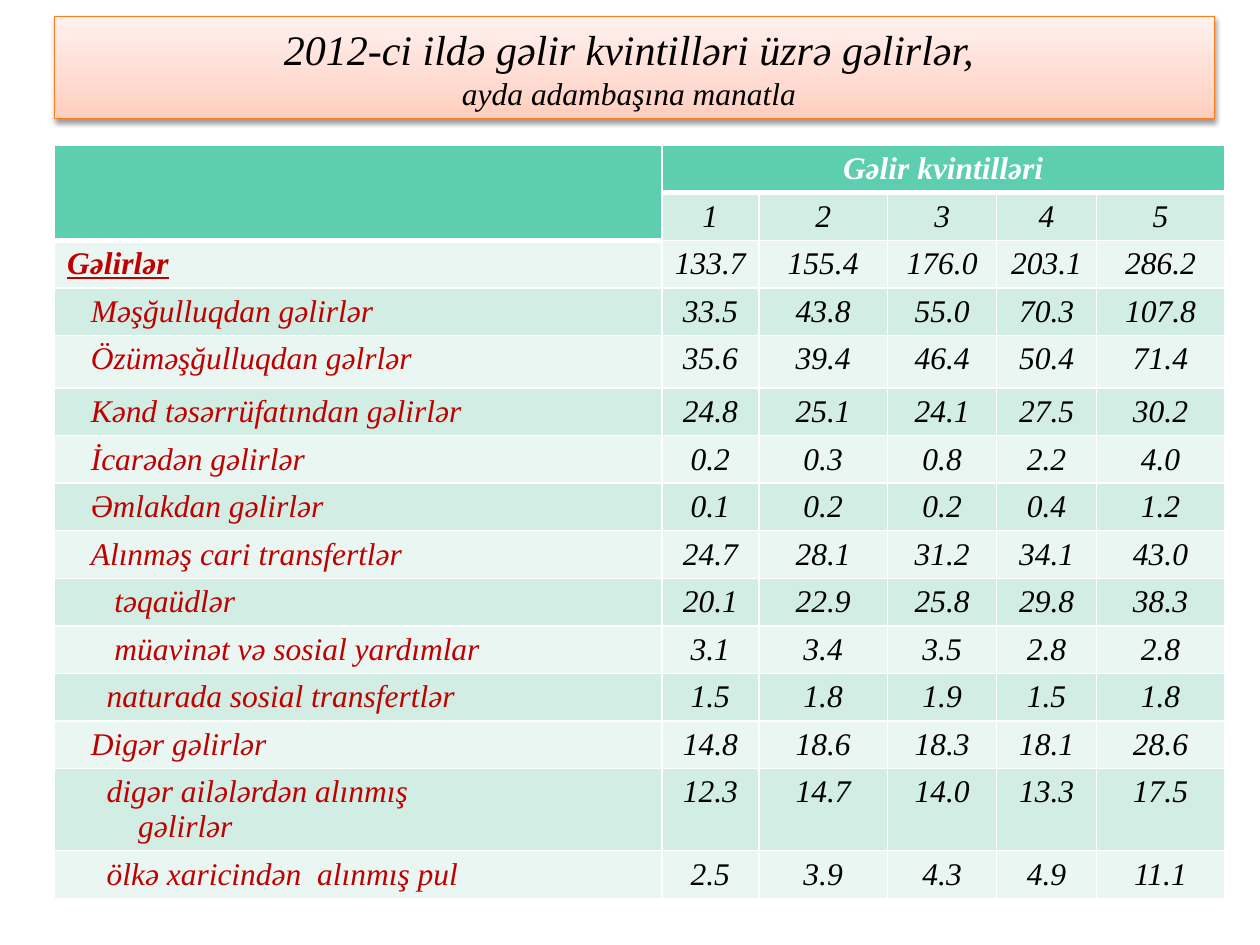
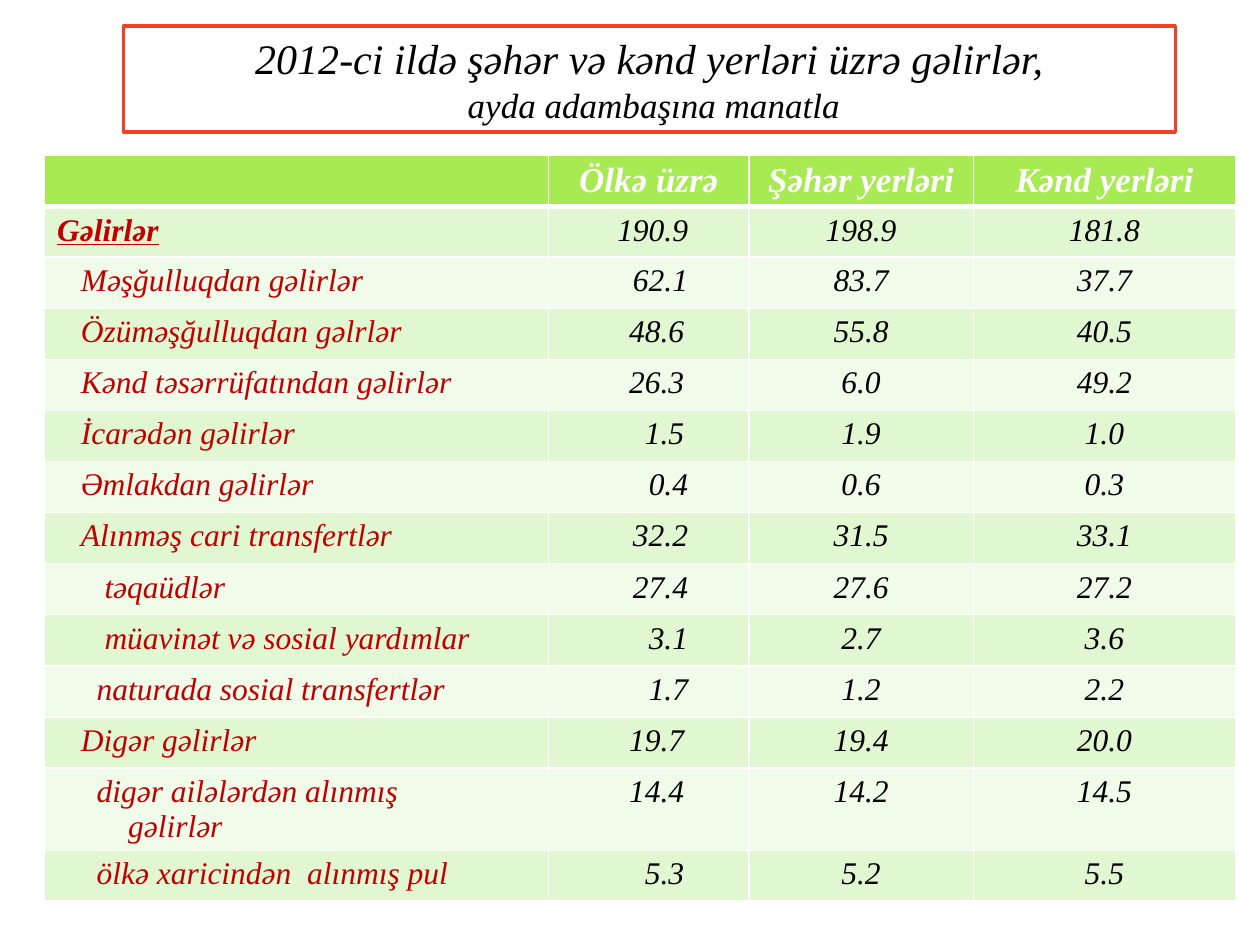
import copy
import lxml.etree
import pptx
import pptx.dml.color
import pptx.enum.text
import pptx.oxml.ns
import pptx.util

Pt = pptx.util.Pt
RGB = pptx.dml.color.RGBColor.from_string
qn = pptx.oxml.ns.qn
ALIGN = pptx.enum.text.PP_ALIGN

FONT = "Times New Roman"
SPACE = 4.5
COLORS = {
    "text": "000000",
    "label": "C00000",
    "white": "FFFFFF",
    "teal": "5DCEAF",
    "teal_band": "D2EDE3",
    "teal_pale": "EAF6F2",
    "green": "A7EA52",
    "green_band": "E1F7D1",
    "green_pale": "F1FBE9",
    "orange_line": "FF7C1B",
    "red_line": "F14124",
    "glow_dark": "FFCDBD",
    "glow_mid": "FFDBD1",
    "glow_light": "FFF1EE",
}

INCOME_LABELS = [
    ("Gəlirlər", [0]),
    ("Məşğulluqdan gəlirlər", [3]),
    ("Özüməşğulluqdan gəlrlər", [3]),
    ("Kənd təsərrüfatından gəlirlər", [3]),
    ("İcarədən gəlirlər", [3]),
    ("Əmlakdan gəlirlər", [3]),
    ("Alınməş cari transfertlər", [3]),
    ("təqaüdlər", [6]),
    ("müavinət və sosial yardımlar", [6]),
    ("naturada sosial transfertlər", [5]),
    ("Digər gəlirlər", [3]),
    ("digər ailələrdən alınmış\ngəlirlər", [5, 9]),
    ("ölkə xaricindən  alınmış pul", [5]),
]

QUINTILE_VALUES = """133.7 155.4 176.0 203.1 286.2
33.5 43.8 55.0 70.3 107.8
35.6 39.4 46.4 50.4 71.4
24.8 25.1 24.1 27.5 30.2
0.2 0.3 0.8 2.2 4.0
0.1 0.2 0.2 0.4 1.2
24.7 28.1 31.2 34.1 43.0
20.1 22.9 25.8 29.8 38.3
3.1 3.4 3.5 2.8 2.8
1.5 1.8 1.9 1.5 1.8
14.8 18.6 18.3 18.1 28.6
12.3 14.7 14.0 13.3 17.5
2.5 3.9 4.3 4.9 11.1"""

AREA_VALUES = """190.9 198.9 181.8
62.1 83.7 37.7
48.6 55.8 40.5
26.3 6.0 49.2
1.5 1.9 1.0
0.4 0.6 0.3
32.2 31.5 33.1
27.4 27.6 27.2
3.1 2.7 3.6
1.7 1.2 2.2
19.7 19.4 20.0
14.4 14.2 14.5
5.3 5.2 5.5"""

PAGES = [
    {
        "title": "2012-ci ildə gəlir kvintilləri üzrə gəlirlər,\nayda adambaşına manatla",
        "title_box": (31, 9.4, 663, 58.3),
        "title_sizes": (24, 18),
        "title_indents": (("marR", 6), ("marL", 0)),
        "line": ("orange_line", 0.75),
        "table_at": (31.2, 83),
        "columns": (347, 55.4, 73.6, 62.4, 57, 73.2),
        "rows": [27] * 4 + [30.2] + [27] * 8 + [47, 27],
        "headers": [["", "Gəlir kvintilləri", "", "", "", ""], ["", "1", "2", "3", "4", "5"]],
        "header_size": 18,
        "values": QUINTILE_VALUES,
        "first_column_shift": [0] * 13,
        "theme": "teal",
    },
    {
        "title": "2012-ci ildə şəhər və kənd yerləri üzrə gəlirlər,\nayda adambaşına manatla",
        "title_box": (70.6, 15, 601, 60.5),
        "title_sizes": (24, 20),
        "title_indents": (("marL", 0), ("marL", 5)),
        "line": ("red_line", 2),
        "table_at": (25.5, 88.6),
        "columns": (288, 114.4, 128.3, 149.8),
        "rows": [29.5, 28.8] + [29.2] * 10 + [47, 29],
        "headers": [["", "Ölkə üzrə", "Şəhər yerləri", "Kənd yerləri"]],
        "header_size": 20,
        "values": AREA_VALUES,
        "first_column_shift": [1, 3, 2, 2, 4, 5, 3, 3, 5, 5, 2, 2, 4],
        "theme": "green",
    },
]


def format_paragraph(paragraph, size, color, align, bold=False, underline=False):
    paragraph.alignment = align
    for run in paragraph.runs:
        run.font.name = FONT
        run.font.size = Pt(size)
        run.font.italic = True
        run.font.bold = bold
        run.font.underline = underline
        run.font.color.rgb = RGB(COLORS[color])
    if not paragraph.runs:
        end = lxml.etree.SubElement(paragraph._p, qn("a:endParaRPr"), sz=str(size * 100))
        lxml.etree.SubElement(end, qn("a:latin"), typeface=FONT)


def add_border(cell, side, width):
    line = lxml.etree.SubElement(cell._tc.get_or_add_tcPr(), qn("a:ln" + side), w=str(Pt(width)))
    solid = lxml.etree.SubElement(line, qn("a:solidFill"))
    lxml.etree.SubElement(solid, qn("a:srgbClr"), val=COLORS["white"])


prs = pptx.Presentation()
prs.slide_width, prs.slide_height = Pt(720), Pt(540)

for page in PAGES:
    slide = prs.slides.add_slide(prs.slide_layouts[5])
    title = slide.shapes.title
    title.left, title.top, title.width, title.height = map(Pt, page["title_box"])
    line_color, line_width = page["line"]
    title.line.color.rgb = RGB(COLORS[line_color])
    title.line.width = Pt(line_width)
    if page["theme"] == "teal":
        title.fill.gradient()
        title.fill.gradient_angle = 90
        stop_list = title._element.spPr.find(".//" + qn("a:gsLst"))
        stop_list.insert(1, copy.deepcopy(stop_list[0]))
        glow = (("glow_dark", 0), ("glow_mid", 0.35), ("glow_light", 1))
        for stop, (color, position) in zip(title.fill.gradient_stops, glow):
            stop.color.rgb = RGB(COLORS[color])
            stop.position = position
        effects = lxml.etree.SubElement(title._element.spPr, qn("a:effectLst"))
        shadow = lxml.etree.SubElement(
            effects, qn("a:outerShdw"), blurRad=str(Pt(3.1)), dist=str(Pt(1.6)),
            dir="5400000", rotWithShape="0")
        shade = lxml.etree.SubElement(shadow, qn("a:srgbClr"), val=COLORS["text"])
        lxml.etree.SubElement(shade, qn("a:alpha"), val="38000")
    else:
        title.fill.solid()
        title.fill.fore_color.rgb = RGB(COLORS["white"])

    title.text_frame.text = page["title"]
    title.text_frame.word_wrap = True
    title.text_frame.auto_size = pptx.enum.text.MSO_AUTO_SIZE.NONE
    title.text_frame.vertical_anchor = pptx.enum.text.MSO_ANCHOR.MIDDLE
    for paragraph, size, (edge, indent) in zip(
            title.text_frame.paragraphs, page["title_sizes"], page["title_indents"]):
        format_paragraph(paragraph, size, "text", ALIGN.CENTER)
        paragraph._p.get_or_add_pPr().set(edge, str(Pt(indent)))

    headers, columns, rows = page["headers"], page["columns"], page["rows"]
    left, top = page["table_at"]
    incomes = slide.shapes.add_table(
        len(rows), len(columns), Pt(left), Pt(top), Pt(sum(columns)), Pt(sum(rows))).table
    for column, width in zip(incomes.columns, columns):
        column.width = Pt(width)
    for row, height in zip(incomes.rows, rows):
        row.height = Pt(height)

    values = [line.split() for line in page["values"].splitlines()]
    contents = headers + [[label] + numbers for (label, _), numbers in zip(INCOME_LABELS, values)]
    for r, texts in enumerate(contents):
        item = r - len(headers)
        for c, text in enumerate(texts):
            cell = incomes.cell(r, c)
            header_depth = len(headers) if c == 0 else 1
            is_header = r < header_depth
            is_label = c == 0 and not is_header
            is_total = is_label and item == 0
            add_border(cell, "L", 1)
            add_border(cell, "R", 1)
            add_border(cell, "T", 3 if r == header_depth else 1)
            add_border(cell, "B", 3 if r == header_depth - 1 else 1)
            band = "" if is_header else "_band" if r % 2 else "_pale"
            cell.fill.solid()
            cell.fill.fore_color.rgb = RGB(COLORS[page["theme"] + band])

            cell.text_frame.text = text
            indents = [0]
            if is_label:
                indents = INCOME_LABELS[item][1]
            elif c == 1 and item >= 0:
                indents = [page["first_column_shift"][item]]
            for paragraph, indent in zip(cell.text_frame.paragraphs, indents):
                format_paragraph(
                    paragraph,
                    page["header_size"] if is_header else 18,
                    "white" if is_header else "label" if is_label else "text",
                    ALIGN.LEFT if is_label else ALIGN.CENTER,
                    bold=is_header or is_total,
                    underline=is_total)
                paragraph._p.get_or_add_pPr().set("marL", str(Pt(indent * SPACE)))

    if len(headers) == 2:
        incomes.cell(0, 0).merge(incomes.cell(1, 0))
        incomes.cell(0, 1).merge(incomes.cell(0, len(columns) - 1))

prs.save("out.pptx")
